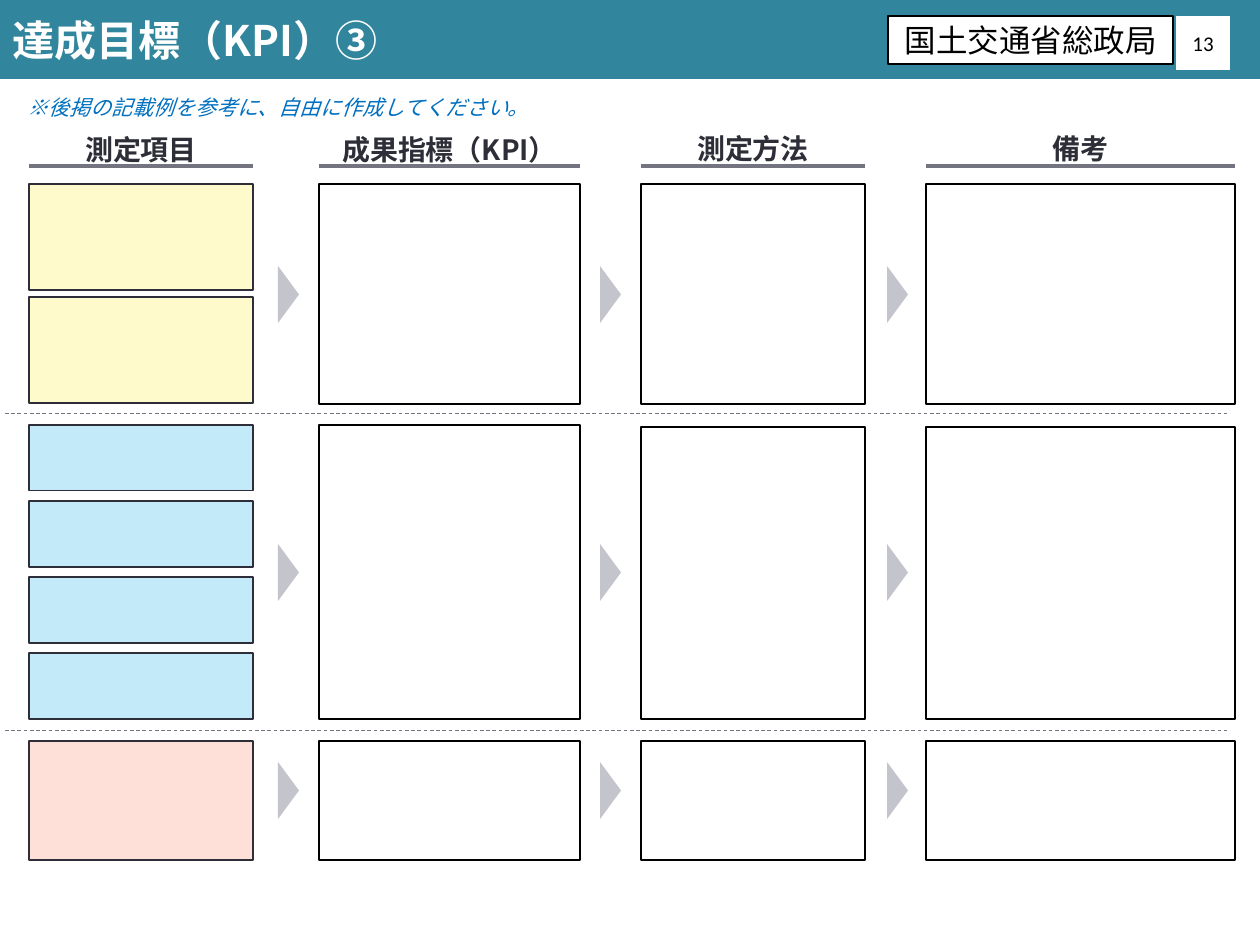
"""Build the blank KPI target sheet slide."""
import pptx
import pptx.dml.color
import pptx.enum.dml
import pptx.enum.shapes
import pptx.enum.text
import pptx.oxml
import pptx.oxml.ns
import pptx.util
from lxml import etree

SCALE = 914400 / 126
COLORS = {
    "teal": "31859C", "white": "FFFFFF", "black": "000000", "ink": "2E2E38",
    "rule": "747480", "arrow": "C4C4CD", "note": "0070C0",
    "yellow": "FFFACC", "blue": "C3EAF9", "pink": "FFE0D9",
}
SANS = "Noto Sans CJK JP"
SHAPE = pptx.enum.shapes.MSO_SHAPE
ALIGN = pptx.enum.text.PP_ALIGN
HEADERS = [
    ("測定項目", 29, 224, 127),
    ("成果指標（KPI）", 319, 261, 127),
    ("測定方法", 641, 224, 125),
    ("備考", 926, 309, 125),
]
ITEMS = [
    ("yellow", 184, 106, 113, 2),
    ("blue", 425, 66, 76, 4),
    ("pink", 741, 119, 0, 1),
]
BANDS = [(184, 404), (425, 719), (741, 860)]
ARROW_LEFTS = [260, 582, 869]
ARROW_TOPS = [284, 562, 780]


def px(length):
    """Turn pixels into EMU."""
    return pptx.util.Emu(round(length * SCALE))


def rgb(name):
    """Return a named colour."""
    return pptx.dml.color.RGBColor.from_string(COLORS[name])


def write(box, text, size, color, font=SANS, bold=False, italic=False,
          align=ALIGN.CENTER, inset=None):
    """Put one formatted paragraph in a box."""
    frame = box.text_frame
    frame.text = text
    frame.word_wrap = True
    frame.vertical_anchor = pptx.enum.text.MSO_ANCHOR.MIDDLE
    if inset is not None:
        frame.margin_left = frame.margin_right = px(inset)
        frame.margin_top = frame.margin_bottom = px(inset)
    para = frame.paragraphs[0]
    para.alignment = align
    para.font.size = pptx.util.Pt(size)
    para.font.bold = bold
    para.font.italic = italic
    para.font.color.rgb = rgb(color)
    para.font.name = font
    latin = para._p.find(".//" + pptx.oxml.ns.qn("a:latin"))
    east_asian = etree.Element(pptx.oxml.ns.qn("a:ea"), typeface=SANS)
    latin.addnext(east_asian)


def add_box(page, left, top, width, height, fill=None, line=None,
            weight=0.75, kind=SHAPE.RECTANGLE):
    """Add a flat preset shape."""
    box = page.shapes.add_shape(kind, px(left), px(top), px(width), px(height))
    box.shadow.inherit = False
    if fill:
        box.fill.solid()
        box.fill.fore_color.rgb = rgb(fill)
    else:
        box.fill.background()
    if line:
        box.line.color.rgb = rgb(line)
        box.line.width = pptx.util.Pt(weight)
    else:
        box.line.fill.background()
    return box


def add_rule(page, left, right, y, weight, dashed=False):
    """Add a horizontal rule."""
    rule = page.shapes.add_connector(
        pptx.enum.shapes.MSO_CONNECTOR.STRAIGHT, px(left), px(y), px(right), px(y))
    rule.line.color.rgb = rgb("rule")
    rule.line.width = pptx.util.Pt(weight)
    if dashed:
        rule.line.dash_style = pptx.enum.dml.MSO_LINE.DASH
    etree.SubElement(rule._element.spPr, pptx.oxml.ns.qn("a:effectLst"))


def add_title(page):
    """Format the title placeholder as the top banner."""
    title = page.shapes.title
    title.left, title.top, title.width, title.height = px(0), px(0), px(1260), px(79)
    title.fill.solid()
    title.fill.fore_color.rgb = rgb("teal")
    write(title, "達成目標（KPI）③", 24, "white", bold=True, align=ALIGN.LEFT)
    title.text_frame.auto_size = pptx.enum.text.MSO_AUTO_SIZE.NONE


def add_note(page):
    """Add the instruction under the banner."""
    note = page.shapes.add_textbox(px(15), px(88), px(1125), px(38))
    write(note, "※後掲の記載例を参考に、自由に作成してください。", 12, "note",
          font="Arial", italic=True, align=ALIGN.LEFT)


def add_header(page, text, left, width, top):
    """Add an underlined column heading."""
    header = add_box(page, left, top, width, 172 - top, "white")
    write(header, text, 16, "ink", bold=True, inset=8)
    add_rule(page, left, left + width, 166, 2.25)


def add_items(page, color, top, height, pitch, count):
    """Add a stack of coloured item boxes in the first column."""
    for index in range(count):
        add_box(page, 29, top + index * pitch, 224, height, color, "ink")


def add_answers(page):
    """Add the blank answer boxes of the other columns."""
    for column, (_, left, width, _) in enumerate(HEADERS[1:]):
        for band, (top, bottom) in enumerate(BANDS):
            start = top + 2 if band == 1 and column > 0 else top
            add_box(page, left, start, width, bottom - start, line="black")


def add_arrows(page):
    """Add the arrowheads between the columns."""
    for left in ARROW_LEFTS:
        for top in ARROW_TOPS:
            arrow = add_box(page, left, top, 57, 21, "arrow",
                            kind=SHAPE.ISOSCELES_TRIANGLE)
            arrow.rotation = 90


def main():
    """Build and save the deck."""
    deck = pptx.Presentation()
    deck.slide_width, deck.slide_height = px(1260), px(945)
    page = deck.slides.add_slide(deck.slide_layouts[5])
    add_title(page)
    office = add_box(page, 888, 16, 285, 48, "white", "black", 1)
    write(office, "国土交通省総政局", 18, "black", font="Arial")
    for header in HEADERS:
        add_header(page, *header)
    for y in (413, 730):
        add_rule(page, 5, 1229, y, 0.5, dashed=True)
    for items in ITEMS:
        add_items(page, *items)
    add_answers(page)
    add_arrows(page)
    add_note(page)
    number = add_box(page, 1176, 16, 54, 54, "white")
    write(number, "13", 12, "black", font="Calibri")
    deck.save("out.pptx")


if __name__ == "__main__":
    main()
